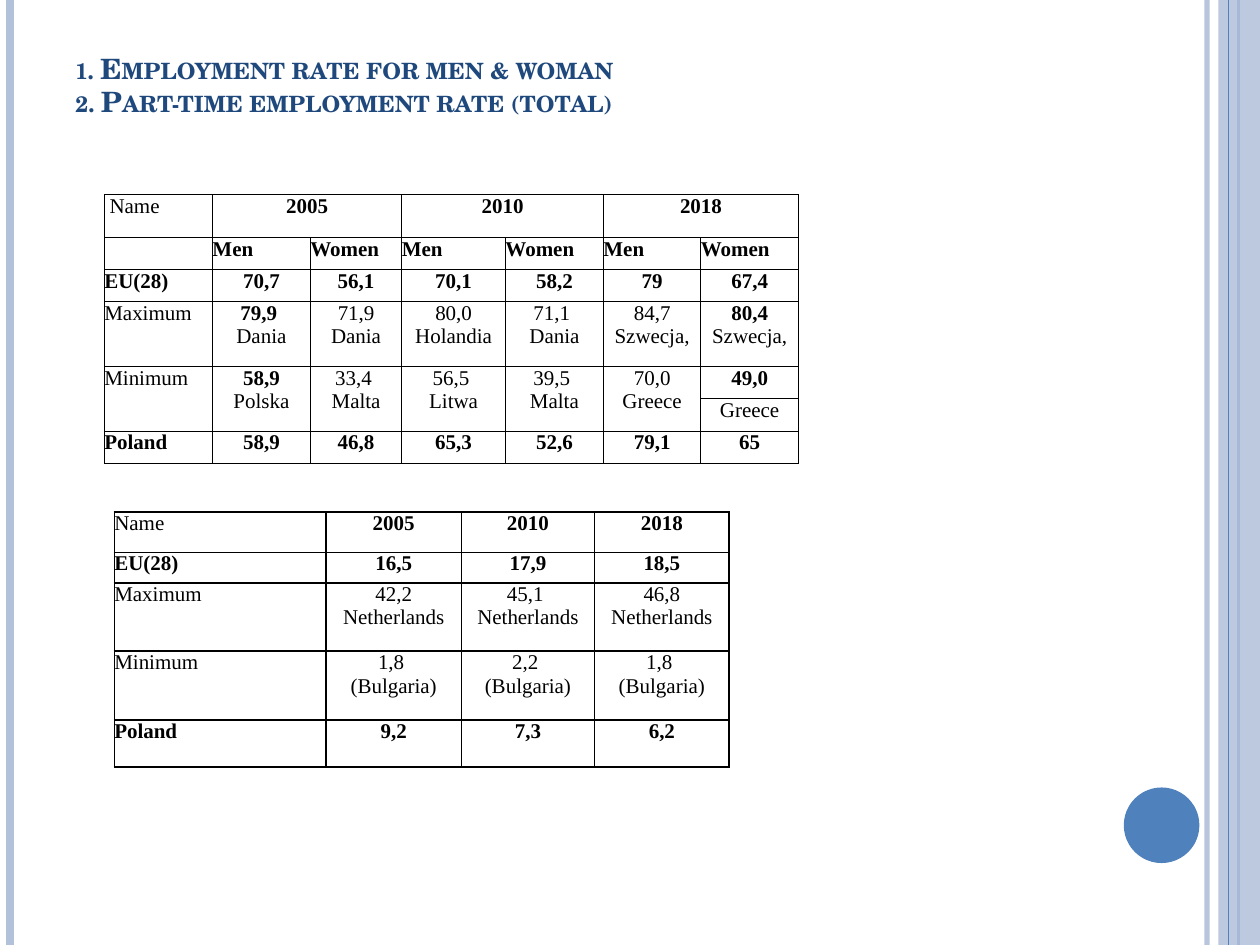
import pptx
import pptx.dml.color
import pptx.enum.shapes
import pptx.enum.text
import pptx.oxml
import pptx.oxml.ns
import pptx.util
from lxml import etree

Pt = pptx.util.Pt
Align = pptx.enum.text.PP_ALIGN

THEME = {
    "pale": "B3C1DB", "accent": "4F81BD", "title": "1F497D", "text": "000000",
    "title_font": "TeX Gyre Schola", "table_font": "Times New Roman",
    "title_size": 16, "table_size": 12, "thin": 0.5, "heavy": 1,
}
WIDTH, HEIGHT = 720, 540

TITLE = "1. Employment rate for men & woman\v2. Part-time employment rate (total)"
TITLE_BOX = (36, 21.6, 588, 49.7)

RAILS_BEHIND = [(689.8, "pale", 3, 93), (5.8, "pale", 4.5, 100), (707.8, "accent", 1.5, 100)]
RAILS_FRONT = [(702, "accent", 0.75, 100)]
SIDE_BAND = (696.2, 0, 23.8, HEIGHT)
DISC = (642.2, 450, 43.2, 43.2)

# Asterisks enclose bold text; None continues a merged cell.
TABLES = [
    {
        "origin": (59.6, 111.2),
        "columns": [61.8, 56, 52.2, 59.3, 56, 55.7, 55.8],
        "rows": [24.6, 18.3, 18.4, 37, 18.4, 18.6, 18.4],
        "heavy_columns": set(), "heavy_rows": set(),
        "cells": [
            [" Name", "*2005*", None, "*2010*", None, "*2018*", None],
            ["", "*Men*", "*Women*", "*Men*", "*Women*", "*Men*", "*Women*"],
            ["*EU(28)*", "*70,7*", "*56,1*", "*70,1*", "*58,2*", "*79*", "*67,4*"],
            ["Maximum", "*79,9 *\nDania", "71,9 Dania", "80,0 Holandia",
             "71,1 \nDania", "84,7 Szwecja,", "*80,4* Szwecja,"],
            ["Minimum", "*58,9 *Polska", "33,4 \nMalta", "56,5 \nLitwa",
             "39,5 \nMalta", "70,0 Greece", "*49,0*"],
            [None, None, None, None, None, None, "Greece"],
            ["*Poland*", "*58,9*", "*46,8*", "*65,3*", "*52,6*", "*79,1*", "*65*"],
        ],
        "merges": [(0, column, 0, column + 1) for column in (1, 3, 5)]
                  + [(4, column, 5, column) for column in range(6)],
        "justified_rows": {1},
    },
    {
        "origin": (65.3, 292.6),
        "columns": [121.1, 77.2, 76.2, 76.9],
        "rows": [22.9, 17.6, 39, 39.4, 27],
        "heavy_columns": {0, 1, 4}, "heavy_rows": {0, 2, 3, 4, 5},
        "cells": [
            ["Name", "*2005*", "*2010*", "*2018*"],
            ["*EU(28)*", "*16,5*", "*17,9*", "*18,5*"],
            ["Maximum", "42,2 Netherlands", "45,1 \nNetherlands", "46,8 Netherlands"],
            ["Minimum", "1,8 \n(Bulgaria)", "2,2 \n(Bulgaria)", "1,8 \n(Bulgaria)"],
            ["*Poland*", "*9,2*", "*7,3*", "*6,2*"],
        ],
        "merges": [],
        "justified_rows": set(),
    },
]


def color(name):
    return pptx.dml.color.RGBColor.from_string(THEME[name])


def points(values):
    return [Pt(value) for value in values]


def set_opacity(element, percent):
    if percent < 100:
        tint = element.find(".//" + pptx.oxml.ns.qn("a:srgbClr"))
        etree.SubElement(tint, pptx.oxml.ns.qn("a:alpha"), val=str(percent * 1000))


def add_rails(slide, rails):
    for x, tone, weight, opacity in rails:
        rail = slide.shapes.add_connector(
            pptx.enum.shapes.MSO_CONNECTOR.STRAIGHT, *points((x, 0, x, HEIGHT)))
        rail.line.color.rgb = color(tone)
        rail.line.width = Pt(weight)
        properties = rail._element.spPr
        set_opacity(properties, opacity)
        etree.SubElement(properties, pptx.oxml.ns.qn("a:effectLst"))


def add_solid(slide, kind, box, tone, opacity=100):
    shape = slide.shapes.add_shape(kind, *points(box))
    shape.shadow.inherit = False
    shape.fill.solid()
    shape.fill.fore_color.rgb = color(tone)
    shape.line.fill.background()
    set_opacity(shape._element.spPr, opacity)


def style_run(run, font, size, tone, bold):
    run.font.name = THEME[font]
    run.font.size = Pt(THEME[size])
    run.font.color.rgb = color(tone)
    run.font.bold = bold


def add_title(slide):
    frame = slide.shapes.add_textbox(*points(TITLE_BOX)).text_frame
    frame.word_wrap = True
    frame.vertical_anchor = pptx.enum.text.MSO_ANCHOR.BOTTOM
    frame.text = TITLE
    for run in frame.paragraphs[0].runs:
        style_run(run, "title_font", "title_size", "title", True)
        run.font._element.set("cap", "small")


def add_borders(cell, weights):
    properties = cell._tc.get_or_add_tcPr()
    for side, weight in weights.items():
        properties.append(pptx.oxml.parse_xml(
            f'<a:ln{side} {pptx.oxml.ns.nsdecls("a")} w="{Pt(weight)}"><a:solidFill>'
            f'<a:srgbClr val="{THEME["text"]}"/></a:solidFill></a:ln{side}>'))


def fill_cell(cell, text, alignment):
    cell.margin_left = cell.margin_right = cell.margin_top = cell.margin_bottom = 0
    cell.fill.background()
    lines = text.split("\n")
    cell.text_frame.text = "\n" * (len(lines) - 1)
    for paragraph, line in zip(cell.text_frame.paragraphs, lines):
        paragraph.alignment = alignment
        for index, piece in enumerate(line.split("*")):
            if piece:
                run = paragraph.add_run()
                run.text = piece
                style_run(run, "table_font", "table_size", "text", index % 2 == 1)
        ending = paragraph._p.get_or_add_endParaRPr()
        ending.set("sz", str(THEME["table_size"] * 100))


def add_grid(slide, data):
    widths, heights = data["columns"], data["rows"]
    table = slide.shapes.add_table(
        len(heights), len(widths),
        *points((*data["origin"], sum(widths), sum(heights)))).table
    table.first_row = table.horz_banding = False
    for column, width in zip(table.columns, widths):
        column.width = Pt(width)
    for row, height in zip(table.rows, heights):
        row.height = Pt(height)

    def weight(edge, axis):
        return THEME["heavy" if edge in data[axis] else "thin"]

    for r, texts in enumerate(data["cells"]):
        for c, text in enumerate(texts):
            cell = table.cell(r, c)
            add_borders(cell, {
                "L": weight(c, "heavy_columns"), "R": weight(c + 1, "heavy_columns"),
                "T": weight(r, "heavy_rows"), "B": weight(r + 1, "heavy_rows")})
            justified = c == 0 or r in data["justified_rows"]
            fill_cell(cell, text or "", Align.JUSTIFY if justified else Align.CENTER)
    for top, left, bottom, right in data["merges"]:
        table.cell(top, left).merge(table.cell(bottom, right))


def main():
    presentation = pptx.Presentation()
    presentation.slide_width, presentation.slide_height = points((WIDTH, HEIGHT))
    slide = presentation.slides.add_slide(presentation.slide_layouts[6])
    kinds = pptx.enum.shapes.MSO_SHAPE
    add_rails(slide, RAILS_BEHIND)
    add_solid(slide, kinds.RECTANGLE, SIDE_BAND, "pale", 87)
    add_rails(slide, RAILS_FRONT)
    add_solid(slide, kinds.OVAL, DISC, "accent")
    add_title(slide)
    for data in TABLES:
        add_grid(slide, data)
    presentation.save("out.pptx")


if __name__ == "__main__":
    main()
